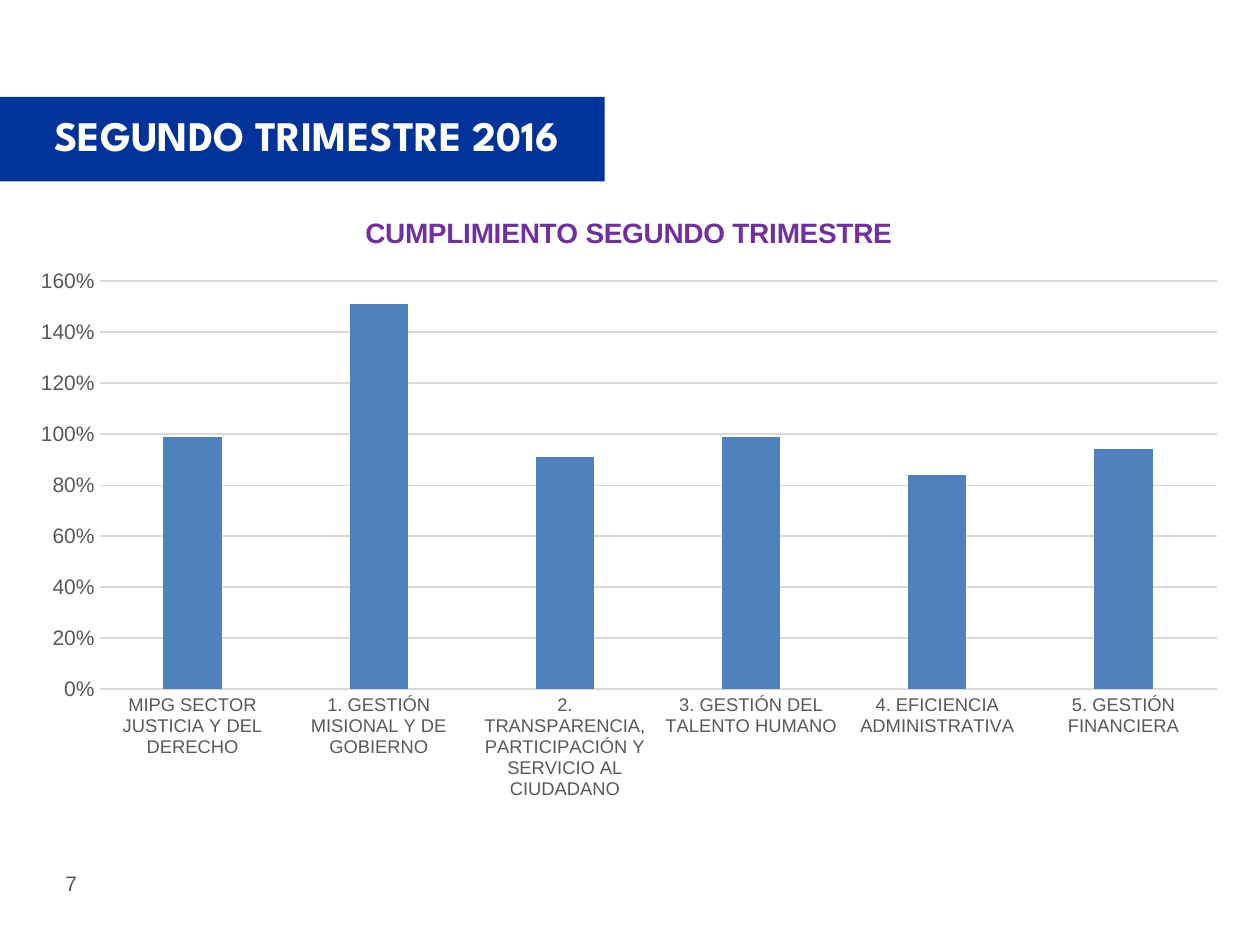
"""Build the slide on compliance in the second quarter of 2016."""
from pptx import Presentation
from pptx import util as u
from pptx.chart.data import CategoryChartData
from pptx.dml.color import RGBColor
from pptx.enum import chart as ch, shapes, text

HEADING = "SEGUNDO TRIMESTRE 2016"
CHART_TITLE = "CUMPLIMIENTO SEGUNDO TRIMESTRE"
PAGE = "7"
COMPLIANCE = {
    "MIPG SECTOR JUSTICIA Y DEL DERECHO": 0.99,
    "1. GESTIÓN MISIONAL Y DE GOBIERNO": 1.51,
    "2. TRANSPARENCIA, PARTICIPACIÓN Y SERVICIO AL CIUDADANO": 0.91,
    "3. GESTIÓN DEL TALENTO HUMANO": 0.99,
    "4. EFICIENCIA ADMINISTRATIVA": 0.84,
    "5. GESTIÓN FINANCIERA": 0.94,
}

WHITE = RGBColor(0xFF, 0xFF, 0xFF)
NAVY = RGBColor(0x00, 0x33, 0x99)
BLUE = RGBColor(0x4F, 0x81, 0xBD)
PURPLE = RGBColor(0x70, 0x30, 0xA0)
GREY = RGBColor(0x59, 0x59, 0x59)
RULE = RGBColor(0xD9, 0xD9, 0xD9)
BLACK = RGBColor(0x00, 0x00, 0x00)


def box(left, top, width, height):
    return [u.Inches(side) for side in (left, top, width, height)]


def style(font, size, color, name="Arial", bold=False):
    font.size, font.name, font.bold = u.Pt(size), name, bold
    font.color.rgb = color


def write(frame, words, align=text.PP_ALIGN.LEFT, **font):
    frame.text = words
    frame.word_wrap = True
    paragraph = frame.paragraphs[0]
    paragraph.alignment = align
    style(paragraph.runs[0].font, **font)


def rule(line):
    line.color.rgb, line.width = RULE, u.Pt(0.75)


def add_compliance(slide):
    data = CategoryChartData(number_format="0%")
    data.categories = list(COMPLIANCE)
    data.add_series("Series 1", list(COMPLIANCE.values()))
    chart = slide.shapes.add_chart(
        ch.XL_CHART_TYPE.COLUMN_CLUSTERED, *box(0.13, 1.52, 9.72, 4.92), data
    ).chart
    style(chart.font, 10, BLACK)
    chart.has_legend = False
    write(chart.chart_title.text_frame, CHART_TITLE, text.PP_ALIGN.CENTER,
          size=16, color=PURPLE, bold=True)
    chart.chart_title.include_in_layout = False

    plot = chart.plots[0]
    plot.gap_width, plot.overlap, plot.vary_by_categories = 219, -27, False
    fill = plot.series[0].format.fill
    fill.solid()
    fill.fore_color.rgb = BLUE

    areas, percent = chart.category_axis, chart.value_axis
    for axis, size in ((areas, 10.5), (percent, 12)):
        axis.major_tick_mark = axis.minor_tick_mark = ch.XL_TICK_MARK.NONE
        style(axis.tick_labels.font, size, GREY)
    rule(areas.format.line)
    percent.format.line.fill.background()
    percent.minimum_scale, percent.maximum_scale, percent.major_unit = 0, 1.6, 0.2
    percent.tick_labels.number_format = "0%"
    percent.tick_labels.number_format_is_linked = False
    rule(percent.major_gridlines.format.line)


def main():
    deck = Presentation()
    deck.slide_width, deck.slide_height = u.Inches(10), u.Inches(7.5)
    slide = deck.slides.add_slide(deck.slide_layouts[5])

    banner = slide.shapes.add_shape(shapes.MSO_SHAPE.RECTANGLE, *box(0, 0.77, 4.8, 0.67))
    banner.shadow.inherit = False
    banner.fill.solid()
    banner.fill.fore_color.rgb = NAVY
    banner.line.fill.background()

    heading = slide.shapes.title
    heading._element.addprevious(banner._element)
    heading.left, heading.top, heading.width, heading.height = box(0.25, 0.83, 4.37, 0.48)
    write(heading.text_frame, HEADING, text.PP_ALIGN.CENTER,
          size=24, color=WHITE, name="League Spartan", bold=True)
    heading.text_frame.vertical_anchor = text.MSO_ANCHOR.MIDDLE
    heading.text_frame.auto_size = text.MSO_AUTO_SIZE.NONE

    add_compliance(slide)

    page = slide.shapes.add_textbox(*box(0.42, 6.86, 0.75, 0.3))
    write(page.text_frame, PAGE, size=12, color=GREY)
    page.text_frame.auto_size = text.MSO_AUTO_SIZE.SHAPE_TO_FIT_TEXT

    deck.save("out.pptx")


if __name__ == "__main__":
    main()
